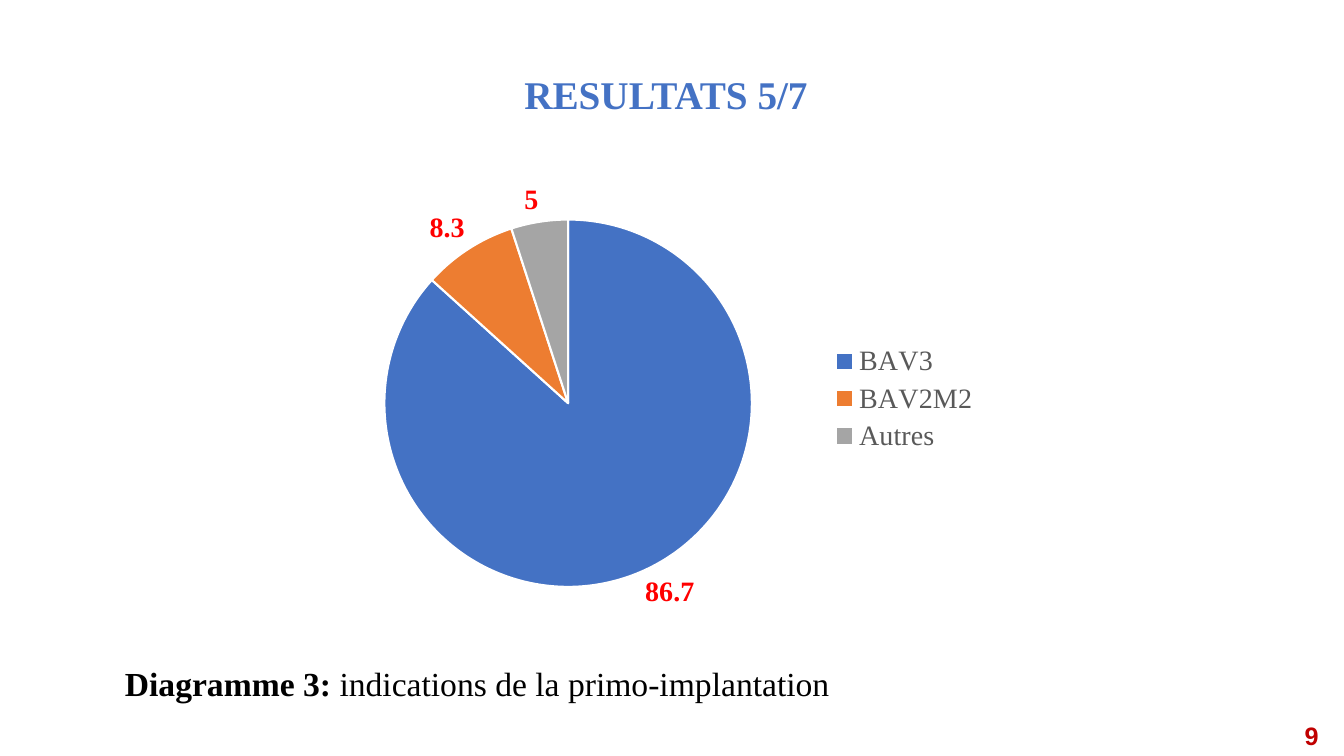
"""Build the results slide with a pie chart of first-implant indications."""
import dataclasses
import typing

import lxml.etree
import pptx
import pptx.chart.data
import pptx.dml.color
import pptx.enum.chart
import pptx.enum.text
import pptx.util

Inches = pptx.util.Inches
Pt = pptx.util.Pt
Align = pptx.enum.text.PP_ALIGN
Anchor = pptx.enum.text.MSO_ANCHOR
SERIF = "Times New Roman"


@dataclasses.dataclass(frozen=True)
class Label:
    box: tuple[float, float, float, float]
    runs: tuple[tuple[str, bool], ...]
    size: int
    color: str
    face: str = SERIF
    align: Align = Align.LEFT
    anchor: Anchor = Anchor.TOP
    lines: float = 1.0
    before: int = 0
    wrap: bool = True


@dataclasses.dataclass(frozen=True)
class Slice:
    name: str
    value: float
    color: str


LABELS = (
    Label((0.92, 0.5, 11.37, 0.72), (("RESULTATS 5/7", True),), 28, "4472C4",
          align=Align.CENTER, anchor=Anchor.BOTTOM, lines=0.9),
    Label((1.14, 6.57, 9.49, 0.72),
          (("Diagramme 3: ", True), ("indications de la primo-implantation", False)),
          24, "000000", lines=0.9, before=10),
    Label((12.84, 7.1, 0.34, 0.4), (("9", True),), 18, "C00000",
          face="Arial", wrap=False),
)
SLICES = (
    Slice("BAV3", 86.7, "4472C4"),
    Slice("BAV2M2", 8.3, "ED7D31"),
    Slice("Autres", 5, "A5A5A5"),
)


def paint(target: typing.Any, color: str) -> None:
    target.rgb = pptx.dml.color.RGBColor.from_string(color)


def style(font: typing.Any, face: str, size: int, color: str) -> None:
    font.name = face
    font.size = Pt(size)
    paint(font.color, color)


def write(slide: typing.Any, label: Label) -> None:
    frame = slide.shapes.add_textbox(*map(Inches, label.box)).text_frame
    frame.word_wrap = label.wrap
    frame.vertical_anchor = label.anchor
    para = frame.paragraphs[0]
    para.alignment = label.align
    para.line_spacing = label.lines
    para.space_before = Pt(label.before)
    style(para.font, label.face, label.size, label.color)
    for text, bold in label.runs:
        run = para.add_run()
        run.text = text
        run.font.bold = bold


def place(plot: typing.Any, box: dict[str, float]) -> None:
    area = plot.getparent()
    space = lxml.etree.QName(area).namespace
    for old in area.findall(f"{{{space}}}layout"):
        area.remove(old)
    layout = lxml.etree.Element(f"{{{space}}}layout")
    manual = lxml.etree.SubElement(layout, f"{{{space}}}manualLayout")
    values = {"layoutTarget": "inner", "xMode": "edge", "yMode": "edge"} | box
    for tag, value in values.items():
        lxml.etree.SubElement(manual, f"{{{space}}}{tag}", val=str(value))
    area.insert(0, layout)


def draw(slide: typing.Any, slices: tuple[Slice, ...]) -> None:
    data = pptx.chart.data.CategoryChartData()
    data.categories = [part.name for part in slices]
    data.add_series("Series 1", [part.value for part in slices])
    chart = slide.shapes.add_chart(
        pptx.enum.chart.XL_CHART_TYPE.PIE,
        *map(Inches, (3.07, 1.65, 6.75, 4.61)), data).chart
    style(chart.font, "Arial", 10, "000000")
    chart.has_title = False
    chart.has_legend = True
    chart.legend.position = pptx.enum.chart.XL_LEGEND_POSITION.RIGHT
    chart.legend.include_in_layout = False
    style(chart.legend.font, SERIF, 20, "595959")

    plot = chart.plots[0]
    plot.vary_by_categories = True
    plot.has_data_labels = True
    tags = plot.data_labels
    tags.show_value = True
    tags.show_percentage = False
    tags.number_format = "General"
    tags.number_format_is_linked = False
    tags.position = pptx.enum.chart.XL_LABEL_POSITION.OUTSIDE_END
    style(tags.font, SERIF, 20, "FF0000")
    tags.font.bold = True

    for index, part in enumerate(slices):
        look = plot.series[0].points[index].format
        look.fill.solid()
        paint(look.fill.fore_color, part.color)
        look.line.width = Pt(1.5)
        paint(look.line.color, "FFFFFF")
    place(chart.plots[0]._element, {"x": 0.11, "y": 0.11, "w": 0.54, "h": 0.8})


def main() -> None:
    deck = pptx.Presentation()
    deck.slide_width = Inches(13.33)
    deck.slide_height = Inches(7.5)
    slide = deck.slides.add_slide(deck.slide_layouts[6])
    draw(slide, SLICES)
    for label in LABELS:
        write(slide, label)
    deck.save("out.pptx")


if __name__ == "__main__":
    main()
